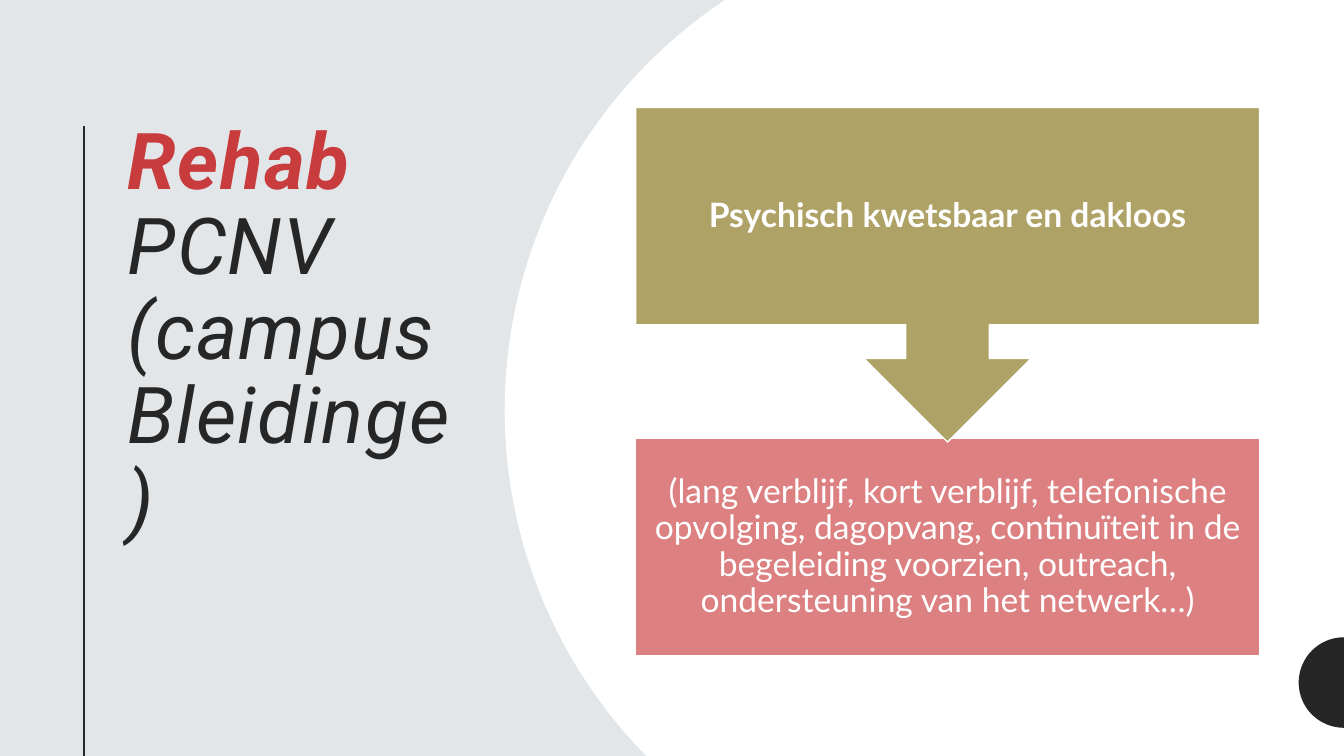
from math import asin, cos, sin

from lxml.etree import SubElement
from pptx import Presentation
from pptx.dml.color import RGBColor
from pptx.enum.shapes import MSO_CONNECTOR as Connector, MSO_SHAPE as Shape
from pptx.enum.text import MSO_ANCHOR as Anchor, PP_ALIGN as Align
from pptx.oxml.ns import qn
from pptx.util import Cm, Pt

WIDTH, HEIGHT = 33.87, 19.05
COLORS = {
    "backdrop": "E2E6E8",
    "white": "FFFFFF",
    "dark": "262626",
    "red": "C93C3D",
    "olive": "AFA266",
    "rose": "DC8081",
}
TITLE_FONT = {"name": "Roboto", "size": Pt(56), "italic": True}
BODY_FONT = {"name": "Lato", "size": Pt(24)}
ARC_STEPS = 90


def color(key):
    return RGBColor.from_string(COLORS[key])


def paint(shape, fill, line=None):
    shape.shadow.inherit = False
    shape.fill.solid()
    shape.fill.fore_color.rgb = color(fill)
    if line:
        shape.line.color.rgb = color(line)
        shape.line.width = Pt(1)
    else:
        shape.line.fill.background()


def add_words(paragraph, words, ink, style):
    run = paragraph.add_run()
    run.text = words
    for attribute, value in style.items():
        setattr(run.font, attribute, value)
    run.font.color.rgb = color(ink)
    return run


def add_frame(slide, box, inset_x, inset_y, anchor):
    frame = slide.shapes.add_textbox(*map(Cm, box)).text_frame
    settings = {
        "word_wrap": True,
        "vertical_anchor": anchor,
        "margin_left": Cm(inset_x),
        "margin_right": Cm(inset_x),
        "margin_top": Cm(inset_y),
        "margin_bottom": Cm(inset_y),
    }
    for attribute, value in settings.items():
        setattr(frame, attribute, value)
    paragraph = frame.paragraphs[0]
    paragraph.line_spacing = 0.9
    return paragraph


def add_disc(slide, center_x, center_y, radius, fill):
    """Disc cut off by the slide edges and filled out to the right edge."""
    top = -asin(min(1, center_y / radius))
    bottom = asin(min(1, (HEIGHT - center_y) / radius))
    angles = [bottom + (top - bottom) * i / ARC_STEPS for i in range(ARC_STEPS + 1)]
    arc = [(center_x - radius * cos(a), center_y + radius * sin(a)) for a in angles]
    outline = arc + [(WIDTH, arc[-1][1]), (WIDTH, arc[0][1])]
    points = [(Cm(x), Cm(y)) for x, y in outline]
    builder = slide.shapes.build_freeform(*points[0], scale=1.0)
    builder.add_line_segments(points[1:], close=True)
    paint(builder.convert_to_shape(), fill)


def add_title(slide, left, top, width, height):
    # Rule to the left, running to the bottom edge
    rule_x, rule_top = Cm(left - 0.85), Cm(top + 0.23)
    rule = slide.shapes.add_connector(
        Connector.STRAIGHT, rule_x, rule_top, rule_x, Cm(HEIGHT))
    rule.line.color.rgb = color("dark")
    rule.line.width = Pt(1.5)
    SubElement(rule._element.spPr, qn("a:effectLst"))

    # Heading
    heading = add_frame(slide, (left, top, width, height), 0.25, 0.13, Anchor.TOP)
    lines = [
        ("Rehab", "red", True),
        ("PCNV", "dark", False),
        ("(campus Bleidinge)", "dark", False),
    ]
    for index, (words, ink, bold) in enumerate(lines):
        if index:
            heading.add_line_break()
        run = add_words(heading, words, ink, {**TITLE_FONT, "bold": bold})
        run._r.get_or_add_rPr().set("spc", "100")


def add_process(slide, left, top, width, height):
    step_height = 5.49
    callout_height = 8.43
    care_top = top + height - step_height
    steps = [
        (care_top, step_height, Shape.RECTANGLE, 0, "rose", False,
         "(lang verblijf, kort verblijf, telefonische opvolging, dagopvang, "
         "continuïteit in de begeleiding voorzien, outreach, "
         "ondersteuning van het netwerk…)"),
        (top, callout_height, Shape.UP_ARROW_CALLOUT, 180, "olive", True,
         "Psychisch kwetsbaar en dakloos"),
    ]
    for step_top, shape_height, preset, rotation, fill, bold, words in steps:
        step = slide.shapes.add_shape(
            preset, Cm(left), Cm(step_top), Cm(width), Cm(shape_height))
        step.rotation = rotation
        paint(step, fill, "white")
        label = add_frame(slide, (left, step_top, width, step_height),
                          0.48, 0.48, Anchor.MIDDLE)
        label.alignment = Align.CENTER
        add_words(label, words, "white", {**BODY_FONT, "bold": bold})


def main():
    deck = Presentation()
    deck.slide_width, deck.slide_height = Cm(WIDTH), Cm(HEIGHT)
    slide = deck.slides.add_slide(deck.slide_layouts[6])
    slide.background.fill.solid()
    slide.background.fill.fore_color.rgb = color("backdrop")

    add_title(slide, 2.97, 2.95, 8.66, 13.36)
    add_disc(slide, 25.12, 10.34, 12.4, "white")
    add_disc(slide, WIDTH, 17.2, 1.14, "dark")
    add_process(slide, 16.02, 2.71, 15.72, 13.82)
    deck.save("out.pptx")


if __name__ == "__main__":
    main()
